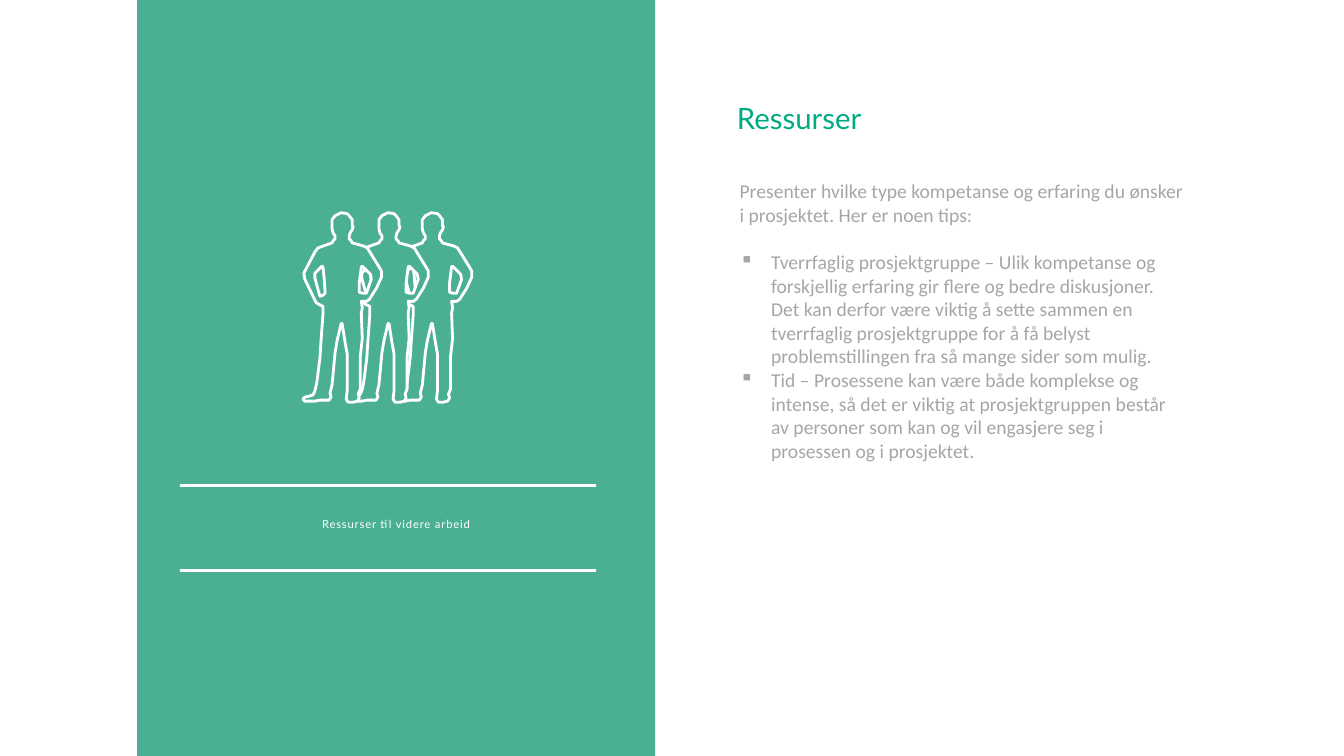
from lxml.etree import SubElement
from pptx import Presentation
from pptx.dml.color import RGBColor
from pptx.enum.shapes import MSO_CONNECTOR, MSO_SHAPE
from pptx.enum.text import MSO_ANCHOR, MSO_AUTO_SIZE, PP_ALIGN
from pptx.oxml.ns import qn
from pptx.util import Pt

HEX = {"green": "4BAF94", "title": "00AB84", "gray": "A6A6A6", "white": "FFFFFF"}

# Outline of one person, then the gap inside each arm, in 1/100 inch
BODY = [
    (428, 211), (422, 214), (419, 218), (419, 224), (419, 227), (420, 231),
    (422, 234), (422, 237), (420, 239), (419, 241), (405, 246), (402, 250),
    (391, 271), (392, 277), (403, 300), (406, 302), (410, 304), (410, 312),
    (408, 339), (407, 355), (404, 379), (402, 388), (400, 392), (392, 394),
    (390, 396), (391, 397), (392, 398), (402, 398), (407, 397), (416, 397),
    (418, 394), (417, 390), (419, 382), (422, 350), (424, 338), (428, 321),
    (429, 321), (432, 340), (434, 351), (434, 388), (433, 396), (435, 399),
    (440, 399), (444, 398), (446, 395), (445, 391), (447, 386), (447, 354),
    (449, 336), (448, 311), (449, 305), (448, 299), (453, 299), (456, 297),
    (463, 286), (468, 275), (468, 269), (467, 267), (454, 246), (450, 244),
    (439, 241), (438, 239), (436, 237), (436, 234), (437, 231), (439, 228),
    (440, 225), (439, 224), (439, 218), (436, 214), (434, 212),
]
RIGHT = [
    (449, 264), (450, 265), (457, 272), (458, 277), (453, 291), (450, 291),
    (446, 290), (446, 281), (448, 265),
]
LEFT = [
    (409, 264), (410, 265), (411, 274), (412, 288), (412, 291), (410, 293),
    (407, 294), (402, 276), (402, 271), (408, 265),
]


def color(key):
    return RGBColor.from_string(HEX[key])


class Deck:
    def __init__(self):
        self.prs = Presentation()
        self.prs.slide_width, self.prs.slide_height = Pt(960), Pt(540)
        self.slide = self.prs.slides.add_slide(self.prs.slide_layouts[5])
        self.shapes = self.slide.shapes

    def panel(self, x, y, w, h):
        box = self.shapes.add_shape(MSO_SHAPE.RECTANGLE, Pt(x), Pt(y), Pt(w), Pt(h))
        box.shadow.inherit = False
        box.fill.solid()
        box.fill.fore_color.rgb = color("green")
        box.line.fill.background()

    def rule(self, x, y, w):
        line = self.shapes.add_connector(
            MSO_CONNECTOR.STRAIGHT, Pt(x), Pt(y), Pt(x + w), Pt(y))
        line.line.color.rgb = color("white")
        line.line.width = Pt(2)
        SubElement(line._element.spPr, qn("a:effectLst"))

    def person(self, shift):
        """Draw one person, moved sideways by shift points."""
        pen = self.shapes.build_freeform(*BODY[0], scale=Pt(0.72))
        pen.add_line_segments(BODY[1:])
        for gap in (RIGHT, LEFT):
            pen.move_to(*gap[0])
            pen.add_line_segments(gap[1:])
        man = pen.convert_to_shape(Pt(shift))
        man.shadow.inherit = False
        man.fill.solid()
        man.fill.fore_color.rgb = color("green")
        man.line.color.rgb = color("white")
        man.line.width = Pt(2)

    def fill(self, box, lines, font, size, key, inset=(0, 0), align=PP_ALIGN.LEFT):
        """Put styled lines of text in the box and return its paragraphs."""
        frame = box.text_frame
        frame.word_wrap = True
        frame.auto_size = MSO_AUTO_SIZE.NONE
        frame.vertical_anchor = MSO_ANCHOR.TOP
        frame.margin_left = frame.margin_right = Pt(inset[0])
        frame.margin_top = frame.margin_bottom = Pt(inset[1])
        frame.text = "\n".join(lines)
        for par in frame.paragraphs:
            par.alignment = align
            for run in par.runs:
                run.font.name = font
                run.font.size = Pt(size)
                run.font.color.rgb = color(key)
        return frame.paragraphs

    def text(self, x, y, w, h, *args, **style):
        box = self.shapes.add_textbox(Pt(x), Pt(y), Pt(w), Pt(h))
        return self.fill(box, *args, **style)

    def title(self, x, y, w, h, *args):
        box = self.shapes.title
        box.left, box.top, box.width, box.height = Pt(x), Pt(y), Pt(w), Pt(h)
        self.fill(box, *args)

    def bullet(self, par, indent):
        props = par._p.get_or_add_pPr()
        props.set("marL", str(Pt(indent)))
        props.set("indent", str(Pt(-indent)))
        SubElement(props, qn("a:buChar")).set("char", "▪")


def main():
    deck = Deck()
    deck.panel(98, 0, 370, 540)
    for y in (347, 407.5):
        deck.rule(128.6, y, 297)
    caption = deck.text(187, 369.4, 192, 9.6, ["Ressurser til videre arbeid"],
                        "Lato", 8, "white", align=PP_ALIGN.CENTER)
    caption[0].runs[0]._r.get_or_add_rPr().set("spc", "60")

    for shift in (0, -31, -64.5):
        deck.person(shift)

    deck.title(526.3, 71.3, 260.6, 49, ["Ressurser"], "Lato", 21, "title")
    tips = deck.text(526.3, 124.6, 321.8, 211, [
        "Presenter hvilke type kompetanse og erfaring du ønsker i prosjektet. "
        "Her er noen tips:",
        "Tverrfaglig prosjektgruppe – Ulik kompetanse og forskjellig erfaring gir "
        "flere og bedre diskusjoner. Det kan derfor være viktig å sette sammen en "
        "tverrfaglig prosjektgruppe for å få belyst problemstillingen fra så mange "
        "sider som mulig.",
        "Tid – Prosessene kan være både komplekse og intense, så det er viktig at "
        "prosjektgruppen består av personer som kan og vil engasjere seg i "
        "prosessen og i prosjektet.",
    ], "Calibri", 14, "gray", inset=(2, 3.6))
    tips[1].space_before = Pt(17)
    for tip in tips[1:]:
        deck.bullet(tip, 22.5)

    deck.prs.save("out.pptx")


if __name__ == "__main__":
    main()
